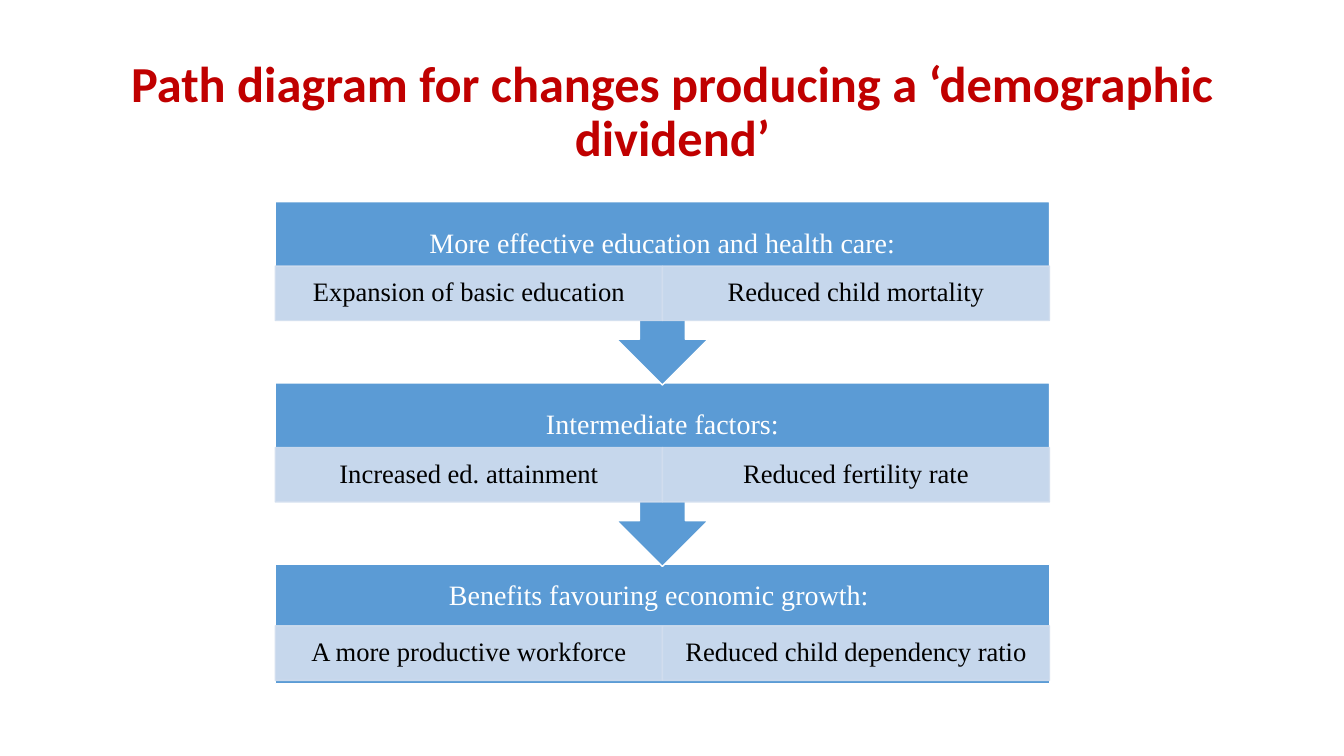
import pptx
import pptx.util
import pptx.dml.color
import pptx.enum.shapes
import pptx.enum.text
import pptx.oxml.ns
import lxml.etree

PX = 9144  # 100 px to the inch
RGBColor = pptx.dml.color.RGBColor
RED = RGBColor(0xC0, 0x00, 0x00)
BLUE = RGBColor(0x5B, 0x9B, 0xD5)
PALE = RGBColor(0xD2, 0xDE, 0xEF)
WHITE = RGBColor(0xFF, 0xFF, 0xFF)
BLACK = RGBColor(0x00, 0x00, 0x00)
MSO_SHAPE = pptx.enum.shapes.MSO_SHAPE

LEFT, WIDTH = 273, 768
CELL_W, CELL_H = WIDTH // 2, 54
TOP, PITCH = 200, 180

prs = pptx.Presentation()
prs.slide_width, prs.slide_height = 1333 * PX, 750 * PX
s = prs.slides.add_slide(prs.slide_layouts[6])


def add_block(kind, x, y, w, h, fill, line, alpha=100):
    sp = s.shapes.add_shape(kind, x * PX, y * PX, w * PX, h * PX)
    sp.shadow.inherit = False
    sp.fill.solid()
    sp.fill.fore_color.rgb = fill
    sp.line.color.rgb = line
    sp.line.width = pptx.util.Pt(1)
    if alpha < 100:
        for clr in sp._element.spPr.iter(pptx.oxml.ns.qn("a:srgbClr")):
            lxml.etree.SubElement(clr, pptx.oxml.ns.qn("a:alpha"), val=str(alpha * 1000))
    return sp


def set_text(sp, text, font, size, color, bold=False, inset=10):
    tf = sp.text_frame
    tf.word_wrap = True
    tf.vertical_anchor = pptx.enum.text.MSO_ANCHOR.MIDDLE
    tf.margin_left = tf.margin_right = inset * PX
    tf.margin_top = tf.margin_bottom = 3 * PX
    tf.text = text
    p = tf.paragraphs[0]
    p.alignment = pptx.enum.text.PP_ALIGN.CENTER
    p.line_spacing = 0.9
    f = p.runs[0].font
    f.name, f.size, f.bold = font, pptx.util.Pt(size), bold
    f.color.rgb = color


# Title
sp = s.shapes.add_textbox(92 * PX, 40 * PX, 1150 * PX, 145 * PX)
set_text(sp, "Path diagram for changes producing a ‘demographic dividend’",
         "Calibri", 36, RED, bold=True)

# Stages: heading, then its two factors
stages = [
    ("More effective education and health care:",
     ["Expansion of basic education", "Reduced child mortality"]),
    ("Intermediate factors:",
     ["Increased ed. attainment", "Reduced fertility rate"]),
    ("Benefits favouring economic growth: ",
     ["A more productive workforce", "Reduced child dependency ratio"]),
]

# Bottom stage first, so that each arrow lies over the stage below it
for i, (heading, factors) in reversed(list(enumerate(stages))):
    y = TOP + i * PITCH
    if i == len(stages) - 1:
        kind, block_h, head_dy, head_h, cell_dy = MSO_SHAPE.RECTANGLE, 118, 0, 64, 61
    else:
        kind, block_h, head_dy, head_h, cell_dy = MSO_SHAPE.DOWN_ARROW_CALLOUT, 182, 22, 41, 64
    add_block(kind, LEFT, y, WIDTH, block_h, BLUE, WHITE)

    sp = s.shapes.add_textbox(LEFT * PX, (y + head_dy) * PX, WIDTH * PX, head_h * PX)
    set_text(sp, heading, "Times New Roman", 20, WHITE, inset=16)

    for j, factor in enumerate(factors):
        sp = add_block(MSO_SHAPE.RECTANGLE, LEFT + j * CELL_W, y + cell_dy,
                       CELL_W, CELL_H, PALE, PALE, alpha=90)
        set_text(sp, factor, "Times New Roman", 19, BLACK, inset=15)

prs.save("out.pptx")
